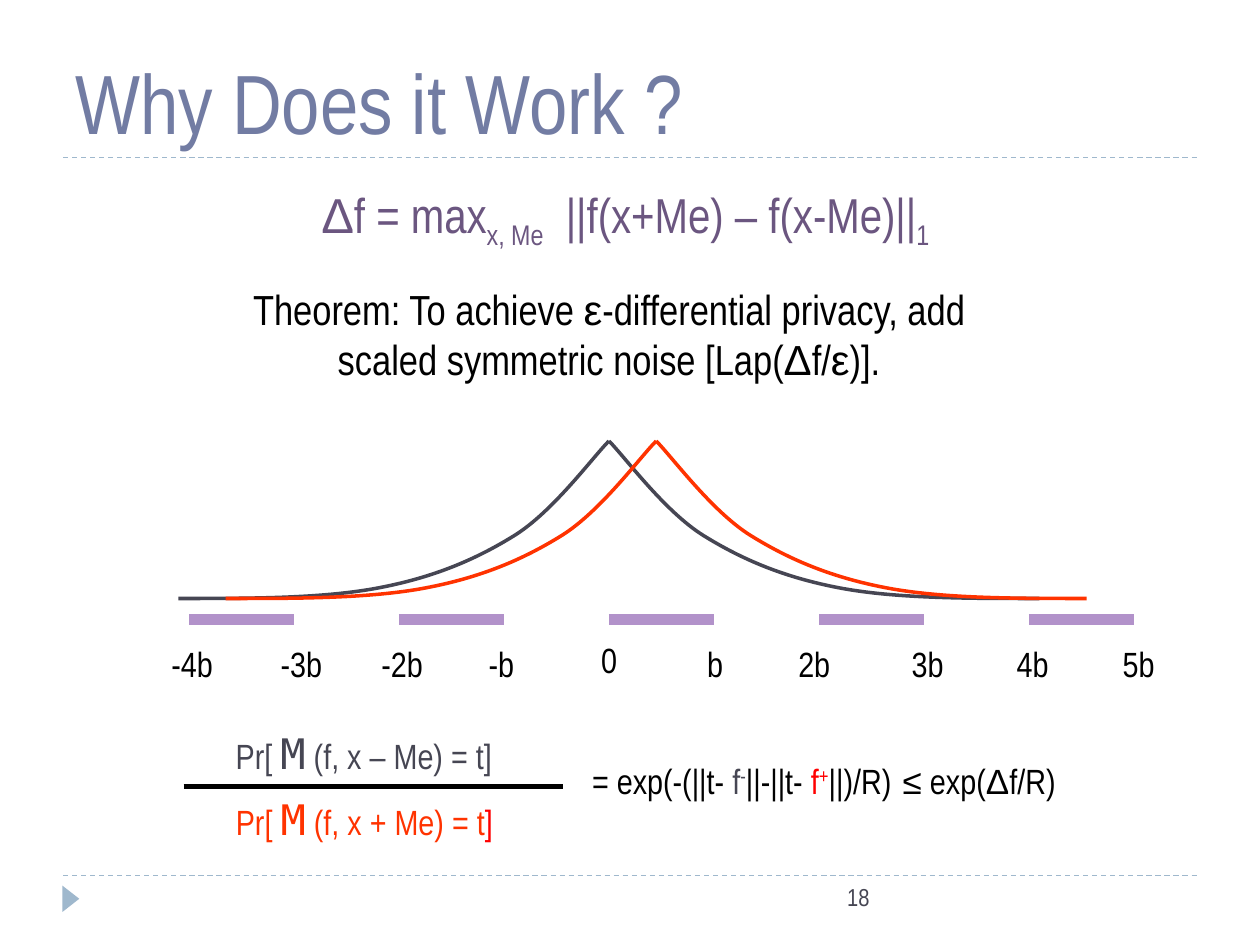
import pptx
import pptx.dml.color
import pptx.enum.dml
import pptx.enum.shapes
import pptx.enum.text
import pptx.oxml.ns
import pptx.util
import lxml.etree

COLORS = {
    "rule": "9FB8CD", "title": "727CA3", "formula": "6B5680", "dark": "464653",
    "orange": "FF3300", "red": "FF0000", "bar": "B292CA", "black": "000000",
}
ALIGN = pptx.enum.text.PP_ALIGN
ANCHOR = pptx.enum.text.MSO_ANCHOR
AUTO_SIZE = pptx.enum.text.MSO_AUTO_SIZE
NARROW, GREEK, MONO = "Arial Narrow", "Arial", "DejaVu Sans Mono"
PX = 7620
HALF_CURVE = [
    (410, 150), (342, 150), (273, 150), (220, 140), (167, 130),
    (127, 113), (90, 90), (53, 67), (15, 15), (0, 0),
]


def rgb(name):
    return pptx.dml.color.RGBColor.from_string(COLORS[name])


class SlideBuilder:
    """Draws styled elements on the current slide, with lengths in px."""

    def __init__(self, slide):
        self.slide = slide

    def line(self, x1, y1, x2, y2, color, width, dashed=False):
        connector = self.slide.shapes.add_connector(
            pptx.enum.shapes.MSO_CONNECTOR.STRAIGHT, x1 * PX, y1 * PX, x2 * PX, y2 * PX)
        connector.line.color.rgb = rgb(color)
        connector.line.width = pptx.util.Pt(width)
        if dashed:
            connector.line.dash_style = pptx.enum.dml.MSO_LINE.DASH
        lxml.etree.SubElement(connector._element.spPr, pptx.oxml.ns.qn("a:effectLst"))

    def triangle(self, left, top, width, height, color):
        shape = self.slide.shapes.add_shape(
            pptx.enum.shapes.MSO_SHAPE.ISOSCELES_TRIANGLE, left * PX, top * PX, width * PX, height * PX)
        shape.rotation = 90
        shape.shadow.inherit = False
        shape.fill.solid()
        shape.fill.fore_color.rgb = rgb(color)
        shape.line.fill.background()

    def half_curve(self, peak_x, peak_y, side, color):
        points = [((peak_x + side * dx) * PX, (peak_y + dy) * PX) for dx, dy in HALF_CURVE]
        builder = self.slide.shapes.build_freeform(*points[0])
        builder.add_line_segments(points[1:], close=False)
        shape = builder.convert_to_shape()
        segments = list(shape._element.iter(pptx.oxml.ns.qn("a:lnTo")))
        outline = segments[0].getparent()
        for start in range(0, len(segments), 3):
            curve = lxml.etree.SubElement(outline, pptx.oxml.ns.qn("a:cubicBezTo"))
            for segment in segments[start:start + 3]:
                curve.append(segment[0])
                outline.remove(segment)
        shape.shadow.inherit = False
        shape.fill.background()
        shape.line.color.rgb = rgb(color)
        shape.line.width = pptx.util.Pt(2)

    def text(self, box, paragraphs, size, color="black", align=ALIGN.CENTER, anchor=ANCHOR.TOP, wrap=False):
        shape = self.slide.shapes.add_textbox(*(length * PX for length in box))
        frame = shape.text_frame
        frame.word_wrap = wrap
        frame.auto_size = AUTO_SIZE.NONE if wrap else AUTO_SIZE.SHAPE_TO_FIT_TEXT
        frame.vertical_anchor = anchor
        for index, pieces in enumerate(paragraphs):
            paragraph = frame.add_paragraph() if index else frame.paragraphs[0]
            paragraph.alignment = align
            for words, style in pieces:
                run = paragraph.add_run()
                run.text = words
                run.font.name = style.get("font", NARROW)
                run.font.size = pptx.util.Pt(style.get("size", size))
                run.font.color.rgb = rgb(style.get("color", color))
                if "baseline" in style:
                    run.font._element.set("baseline", str(style["baseline"] * 1000))


def main():
    presentation = pptx.Presentation()
    presentation.slide_width = 1200 * PX
    presentation.slide_height = 900 * PX
    builder = SlideBuilder(presentation.slides.add_slide(presentation.slide_layouts[6]))
    greek, subscript = {"font": GREEK}, {"baseline": -25}

    for y in (834, 150):
        builder.line(60, y, 1140, y, "rule", 0.75, dashed=True)
    builder.triangle(55, 848, 25, 16, "rule")
    builder.text((380, 834, 460, 48), [[("18", {})]], 14, "dark", ALIGN.RIGHT, wrap=True)
    builder.text((60, 20, 1080, 130), [[("Why Does it Work ?", {})]], 48, "title",
                 ALIGN.LEFT, ANCHOR.BOTTOM, wrap=True)
    builder.text((287, 170, 617, 68), [[
        ("Δ", greek), ("f = max", {}), ("x, Me", subscript),
        ("  ||f(x+Me) – f(x-Me)||", {}), ("1", subscript)]], 28, "formula")

    for peak_x, color in ((580, "dark"), (625, "orange")):
        for side in (-1, 1):
            builder.half_curve(peak_x, 420, side, color)
    for left in range(180, 1180, 200):
        builder.line(left, 590, left + 100, 590, "bar", 6)

    centers = {"0": 580, "b": 681, "2b": 775, "3b": 883, "4b": 983, "5b": 1084,
               "-b": 477, "-2b": 383, "-3b": 287, "-4b": 183}
    for label, center in centers.items():
        top = 602 if label == "0" else 606
        width = 25 + 15 * len(label) - 6 * label.count("-")
        builder.text((center - width // 2, top, width, 53), [[(label, {})]], 20)

    mechanism = ("M", {"font": MONO, "size": 24})
    builder.text((207, 687, 279, 61), [[
        ("Pr[ ", {}), mechanism, (" (f, x – Me) = t]", {})]], 20, "dark")
    builder.text((207, 750, 280, 61), [[
        ("Pr[ ", {}), mechanism, (" (f, x + Me) = t", {}), ("]", {"color": "red"})]], 20, "orange")
    builder.text((552, 717, 481, 53), [[
        ("= exp(-(||t- ", {}),
        ("f", {"color": "dark"}), ("-", {"color": "dark", "baseline": 30}),
        ("||-||t- ", {}),
        ("f", {"color": "red"}), ("+", {"color": "red", "baseline": 30}),
        ("||)/R)", {}), ("  ", {"size": 14}), ("≤ exp(", {}), ("Δ", greek), ("f/R)", {})]],
        20, align=ALIGN.LEFT)
    builder.line(175, 749, 536, 749, "black", 3)
    builder.text((130, 264, 900, 109), [
        [("Theorem: To achieve ", {}), ("ε", greek), ("-differential privacy, add", {})],
        [("scaled symmetric noise [Lap(", {}), ("Δ", greek), ("f/", {}), ("ε", greek), (")].", {})],
    ], 24, wrap=True)

    presentation.save("out.pptx")


if __name__ == "__main__":
    main()
